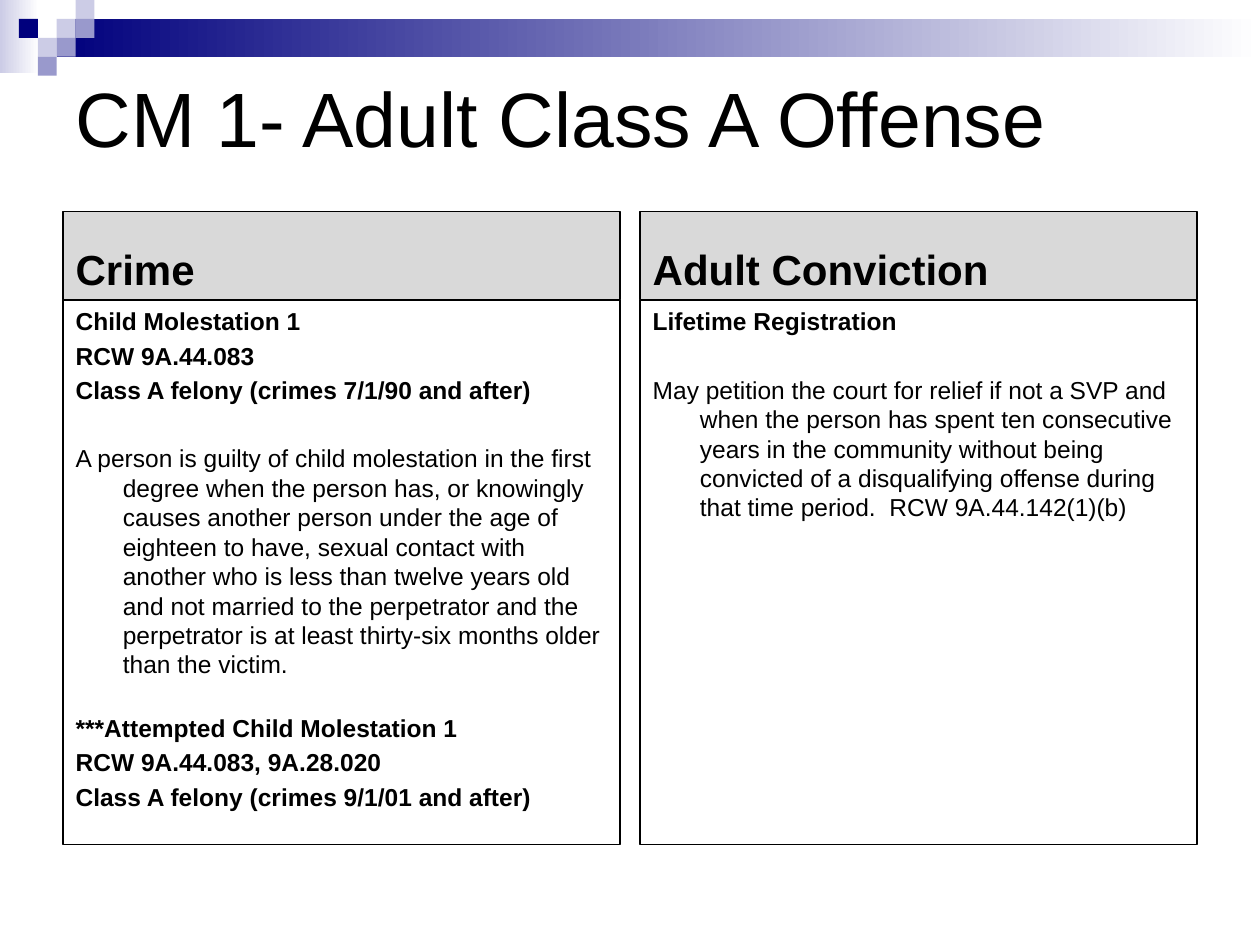
"""Build a slide pairing a crime's definition with its adult registration duty."""
from lxml.etree import SubElement
from pptx import Presentation
from pptx.dml.color import RGBColor
from pptx.enum.shapes import MSO_SHAPE as Preset
from pptx.enum.text import MSO_ANCHOR as Anchor, MSO_AUTO_SIZE as AutoSize, PP_ALIGN as Align
from pptx.oxml.ns import qn
from pptx.util import Inches, Pt

LINE_GAP, BREAK_GAP, BLANK_GAP = 2.8, 19.6, 22.4
CELL = 0.15

CRIME = [
    ("Child Molestation 1", True, LINE_GAP),
    ("RCW 9A.44.083", True, LINE_GAP),
    ("Class A felony (crimes 7/1/90 and after)", True, LINE_GAP),
    ("A person is guilty of child molestation in the first degree when the person has, "
     "or knowingly causes another person under the age of eighteen to have, sexual contact "
     "with another who is less than twelve years old and not married to the perpetrator and "
     "the perpetrator is at least thirty-six months older than the victim.", False, BLANK_GAP),
    ("***Attempted Child Molestation 1", True, BREAK_GAP),
    ("RCW 9A.44.083, 9A.28.020", True, LINE_GAP),
    ("Class A felony (crimes 9/1/01 and after)", True, LINE_GAP),
]
CONVICTION = [
    ("Lifetime Registration", True, LINE_GAP),
    ("May petition the court for relief if not a SVP and when the person has spent ten "
     "consecutive years in the community without being convicted of a disqualifying offense "
     "during that time period.\u00a0 RCW 9A.44.142(1)(b)".replace("\u00a0", " "), False, BLANK_GAP),
]


def color(value):
    return RGBColor.from_string(value)


class ComparisonSlide:
    font = "Arial"
    ink, navy, lilac, violet, white, gray = "000000", "00007D", "CCCCE6", "9999CC", "FFFFFF", "D9D9D9"

    def __init__(self, deck):
        self.page = deck.slides.add_slide(deck.slide_layouts[4])
        self.title_box, *self.bodies = self.page.placeholders
        self.banner = self.page.shapes.add_group_shape()
        self.title_box.element.addprevious(self.banner.element)

    def place(self, box, left, top, width, height):
        box.left, box.top, box.width, box.height = map(Inches, (left, top, width, height))

    def style(self, para, size, bold):
        for span in para.runs:
            span.font.name, span.font.size, span.font.bold = self.font, Pt(size), bold
            span.font.color.rgb = color(self.ink)

    def block(self, left, top, width, height, *tones):
        box = self.banner.shapes.add_shape(
            Preset.RECTANGLE, *map(Inches, (left, top, width, height)))
        box.shadow.inherit = False
        box.line.fill.background()
        if len(tones) == 1:
            box.fill.solid()
            box.fill.fore_color.rgb = color(tones[0])
        else:
            box.fill.gradient()
            box.fill.gradient_angle = 0
            for stop, tone, position in zip(box.fill.gradient_stops, tones, (0, 1)):
                stop.color.rgb, stop.position = color(tone), position

    def title(self, text):
        box = self.title_box
        self.place(box, 0.5, 0.3, 9, 1.25)
        frame = box.text_frame
        frame.text = text
        frame.vertical_anchor, frame.auto_size = Anchor.MIDDLE, AutoSize.NONE
        frame.paragraphs[0].alignment = Align.LEFT
        self.style(frame.paragraphs[0], 44, False)

    def panel(self, box, left, top, height, lines, size, anchor):
        self.place(box, left, top, 4.42, height)
        box.line.color.rgb, box.line.width = color(self.ink), Pt(0.75)
        frame = box.text_frame
        frame.text = "\n".join(text for text, _, _ in lines)
        frame.vertical_anchor, frame.auto_size = anchor, AutoSize.NONE
        for para, (_, bold, gap) in zip(frame.paragraphs, lines):
            para.space_before = Pt(gap)
            SubElement(para._p.get_or_add_pPr(), qn("a:buNone"))
            self.style(para, size, bold)

    def column(self, index, left, heading, lines):
        head, body = self.bodies[2 * index:2 * index + 2]
        self.panel(head, left, 1.68, 0.7, [(heading, True, 4.8)], 24, Anchor.BOTTOM)
        head.fill.solid()
        head.fill.fore_color.rgb = color(self.gray)
        self.panel(body, left, 2.38, 4.32, lines, 14, Anchor.TOP)


def main():
    deck = Presentation()
    deck.slide_width, deck.slide_height = Inches(10), Inches(7.5)
    slide = ComparisonSlide(deck)
    slide.block(0, 0, 0.31, 0.58, slide.lilac, slide.white)
    slide.block(0.45, 0.15, 9.55, 0.3, slide.navy, slide.white)
    checkers = [(3, 1, slide.lilac), (4, 0, slide.lilac), (4, 1, slide.violet),
                (2, 2, slide.lilac), (1, 1, slide.navy), (3, 2, slide.violet),
                (2, 3, slide.violet)]
    for across, down, tone in checkers:
        slide.block(across * CELL, down * CELL, CELL, CELL, tone)
    slide.title("CM 1- Adult Class A Offense")
    slide.column(0, 0.5, "Crime", CRIME)
    slide.column(1, 5.08, "Adult Conviction", CONVICTION)
    deck.save("out.pptx")


if __name__ == "__main__":
    main()
